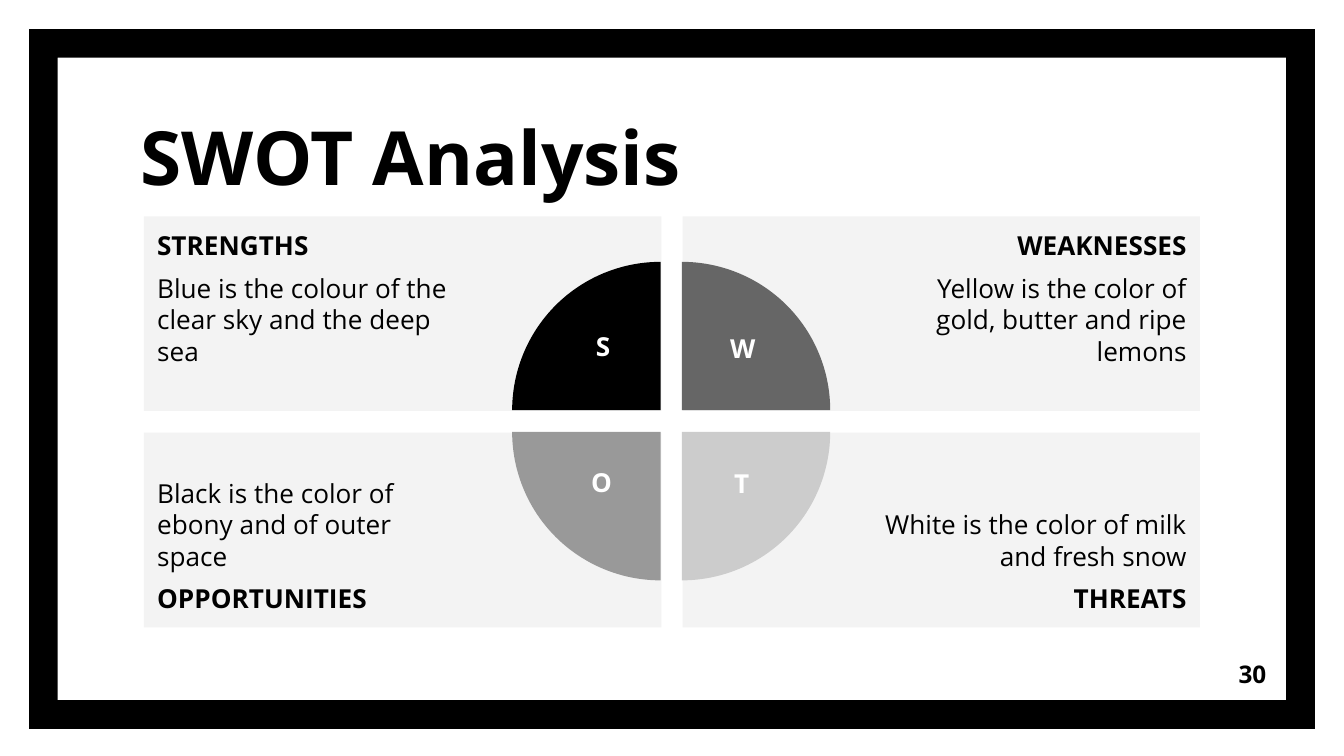
from pptx import Presentation
from pptx.dml.color import RGBColor
from pptx.enum import shapes, text
from pptx.util import Cm, Pt

FONT = "Open Sans"
BLACK = RGBColor(0x00, 0x00, 0x00)
DARK = RGBColor(0x66, 0x66, 0x66)
MID = RGBColor(0x99, 0x99, 0x99)
LIGHT = RGBColor(0xCC, 0xCC, 0xCC)
PANEL = RGBColor(0xF3, 0xF3, 0xF3)
WHITE = RGBColor(0xFF, 0xFF, 0xFF)

LEFT, CENTER, RIGHT = text.PP_ALIGN.LEFT, text.PP_ALIGN.CENTER, text.PP_ALIGN.RIGHT
TOP, MIDDLE, BOTTOM = text.MSO_ANCHOR.TOP, text.MSO_ANCHOR.MIDDLE, text.MSO_ANCHOR.BOTTOM

CARD_X, CARD_Y = (2.72, 12.9), (4.09, 8.18)
CARD_W, CARD_H = 9.78, 3.68
PIE_X, PIE_Y = (9.68, 10.08), (4.95, 5.36)
PIE_SIZE = 5.61
INSET, WIDE_INSET = 0.25, 3.81

QUADRANTS = [
    (0, 0, "STRENGTHS", "Blue is the colour of the clear sky and the deep sea"),
    (1, 0, "WEAKNESSES", "Yellow is the color of gold, butter and ripe lemons"),
    (0, 1, "OPPORTUNITIES", "Black is the color of ebony and of outer space"),
    (1, 1, "THREATS", "White is the color of milk and fresh snow"),
]
PIES = [(0, 0, BLACK), (1, 0, DARK), (1, 1, LIGHT), (0, 1, MID)]
LETTERS = [
    ("S", 10.97, 6.12, 0.86),
    ("W", 13.34, 6.15, 1.4),
    ("O", 10.9, 8.69, 0.94),
    ("T", 13.59, 8.71, 0.86),
]


def add_filled(s, kind, x, y, w, h, color):
    sp = s.shapes.add_shape(kind, Cm(x), Cm(y), Cm(w), Cm(h))
    sp.shadow.inherit = False
    sp.fill.solid()
    sp.fill.fore_color.rgb = color
    sp.line.fill.background()
    return sp


def set_frame(tf, anchor, left=INSET, right=INSET, vertical=INSET):
    tf.word_wrap = True
    tf.vertical_anchor = anchor
    tf.margin_left, tf.margin_right = Cm(left), Cm(right)
    tf.margin_top = tf.margin_bottom = Cm(vertical)


def style(p, content, size, color=BLACK, bold=True, align=LEFT):
    p.text = content
    p.alignment = align
    p.font.name = FONT
    p.font.size = Pt(size)
    p.font.bold = bold
    p.font.color.rgb = color


def add_label(s, content, x, y, w, h, size, anchor, **look):
    tf = s.shapes.add_textbox(Cm(x), Cm(y), Cm(w), Cm(h)).text_frame
    set_frame(tf, anchor)
    style(tf.paragraphs[0], content, size, **look)
    return tf


def add_card(s, col, row, heading, body):
    sp = add_filled(s, shapes.MSO_SHAPE.RECTANGLE, CARD_X[col], CARD_Y[row],
                    CARD_W, CARD_H, PANEL)
    tf = sp.text_frame
    left, right = (WIDE_INSET, INSET) if col else (INSET, WIDE_INSET)
    set_frame(tf, BOTTOM if row else TOP, left, right)
    align = RIGHT if col else LEFT
    lines = [(heading, True), (body, False)]
    if row:
        lines.reverse()
    first, second = tf.paragraphs[0], tf.add_paragraph()
    for p, (content, bold) in zip((first, second), lines):
        style(p, content, 14, bold=bold, align=align)
    second.space_before = second.space_after = Pt(6)


def add_quarter(s, col, row, color, turn):
    sp = add_filled(s, shapes.MSO_SHAPE.PIE, PIE_X[col], PIE_Y[row],
                    PIE_SIZE, PIE_SIZE, color)
    sp.adjustments[0] = 108
    sp.adjustments[1] = 162
    sp.rotation = turn


def main():
    prs = Presentation()
    prs.slide_width, prs.slide_height = Cm(25.4), Cm(14.29)
    s = prs.slides.add_slide(prs.slide_layouts[6])

    frame = add_filled(s, shapes.MSO_SHAPE.FRAME, 0.55, 0.55, 24.3, 13.23, BLACK)
    frame.adjustments[0] = 0.041
    add_label(s, "30", 22.66, 12.19, 1.52, 1.09, 13, MIDDLE, align=RIGHT)

    for quadrant in QUADRANTS:
        add_card(s, *quadrant)
    for i, (col, row, color) in enumerate(PIES):
        add_quarter(s, col, row, color, 90 * i)
    for letter, x, y, w in LETTERS:
        tf = add_label(s, letter, x, y, w, 0.95, 14, TOP, color=WHITE, align=CENTER)
        set_frame(tf, TOP, 0, 0, 0.13)

    add_label(s, "SWOT Analysis", 2.41, 2.36, 14.15, 1.68, 40, BOTTOM)
    prs.save("out.pptx")


if __name__ == "__main__":
    main()
